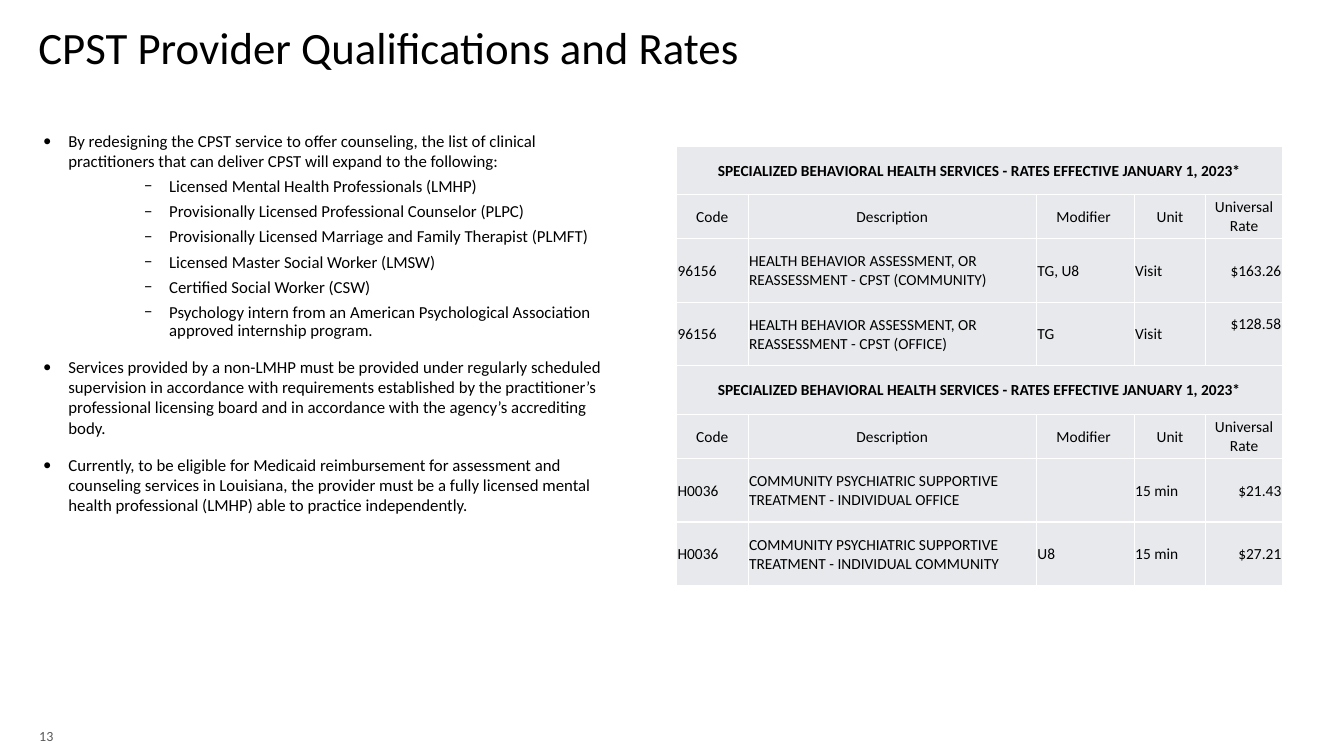
"""Build the CPST provider qualifications and rates slide."""
from dataclasses import dataclass

from lxml.etree import SubElement
from pptx import Presentation
from pptx.dml.color import RGBColor as Color
from pptx.enum.text import MSO_ANCHOR as Anchor, PP_ALIGN as Align
from pptx.oxml.ns import qn
from pptx.util import Inches, Pt

TITLE = "CPST Provider Qualifications and Rates"
PAGE_NUMBER = "13"
POINTS = [
    (0, "By redesigning the CPST service to offer counseling, the list of clinical "
        "practitioners that can deliver CPST will expand to the following:"),
    (1, "Licensed Mental Health Professionals (LMHP)"),
    (1, "Provisionally Licensed Professional Counselor (PLPC)"),
    (1, "Provisionally Licensed Marriage and Family Therapist (PLMFT)"),
    (1, "Licensed Master Social Worker (LMSW)"),
    (1, "Certified Social Worker (CSW)"),
    (1, "Psychology intern from an American Psychological Association "
        "approved internship program."),
    (0, "Services provided by a non-LMHP must be provided under regularly scheduled "
        "supervision in accordance with requirements established by the practitioner’s "
        "professional licensing board and in accordance with the agency’s accrediting body."),
    (0, "Currently, to be eligible for Medicaid reimbursement for assessment and "
        "counseling services in Louisiana, the provider must be a fully licensed mental "
        "health professional (LMHP) able to practice independently."),
]
BANNER = ("SPECIALIZED BEHAVIORAL HEALTH SERVICES - RATES EFFECTIVE JANUARY 1, 2023*",)
HEADINGS = ("Code", "Description", "Modifier ", "Unit", "Universal Rate")
ASSESSMENT = "HEALTH BEHAVIOR ASSESSMENT, OR REASSESSMENT - CPST "
TREATMENT = "COMMUNITY PSYCHIATRIC SUPPORTIVE TREATMENT - INDIVIDUAL "
RATE_GROUPS = [
    [("96156", ASSESSMENT + "(COMMUNITY)", "TG, U8", "Visit", "$163.26"),
     ("96156", ASSESSMENT + "(OFFICE)", "TG", "Visit", "$128.58")],
    [("H0036", TREATMENT + "OFFICE", "", "15 min", "$21.43"),
     ("H0036", TREATMENT + "COMMUNITY", "U8", "15 min", "$27.21")],
]
RAISED_RATE = "$128.58"

SLIDE_SIZE = (13.33, 7.5)
TITLE_AREA = (0.28, 0.21, 11.03, 1.24)
POINTS_AREA = (0.33, 1.25, 5.81, 4.76)
NUMBER_AREA = (0.29, 7.03, 0.59, 0.4)
TABLE_CORNER = (6.71, 1.45)
COLUMNS = (0.71, 2.86, 0.97, 0.71, 0.76)
BANNER_ROW, HEADING_ROW, RATE_ROW = 0.48, 0.44, 0.63
LEVELS = [
    {"bullet": "•", "indent": 0.25, "before": 12, "spacing": 1.0},
    {"bullet": "−", "indent": 1.25, "before": 5, "spacing": 0.9},
]
HANGING = 0.25


@dataclass(frozen=True)
class Theme:
    font: str = "Calibri"
    ink: str = "000000"
    muted: str = "595959"
    cell: str = "E7E9EC"
    border: str = "FFFFFF"
    title_size: int = 32
    body_size: int = 12
    table_size: int = 11
    number_size: int = 10


THEME = Theme()


def style(para, size, color=THEME.ink, bold=False):
    for font in [para.font] + [span.font for span in para.runs]:
        font.name, font.size, font.bold = THEME.font, Pt(size), bold
        font.color.rgb = Color.from_string(color)


def add_box(page, area):
    box = page.shapes.add_textbox(*map(Inches, area))
    box.text_frame.word_wrap = True
    return box.text_frame


def add_title(page):
    title = page.shapes.title
    title.left, title.top, title.width, title.height = map(Inches, TITLE_AREA)
    frame = title.text_frame
    frame.text = TITLE
    frame.word_wrap = True
    frame.vertical_anchor = Anchor.TOP
    para = frame.paragraphs[0]
    para.alignment, para.line_spacing = Align.LEFT, 0.9
    style(para, THEME.title_size)


def add_points(page):
    frame = add_box(page, POINTS_AREA)
    for index, (depth, text) in enumerate(POINTS):
        level = LEVELS[depth]
        para = frame.add_paragraph() if index else frame.paragraphs[0]
        para.text = text
        para.level = depth
        para.line_spacing = level["spacing"]
        para.space_before = Pt(level["before"] if index else 0)
        props = para._p.get_or_add_pPr()
        props.set("marL", str(Inches(level["indent"])))
        props.set("indent", str(-Inches(HANGING)))
        SubElement(props, qn("a:buFont"), typeface=THEME.font)
        SubElement(props, qn("a:buChar"), char=level["bullet"])
        style(para, THEME.body_size)


def add_borders(cell):
    props = cell._tc.get_or_add_tcPr()
    for position, side in enumerate(("lnL", "lnR", "lnT", "lnB")):
        line = SubElement(props, qn(f"a:{side}"), w=str(Pt(1)))
        fill = SubElement(line, qn("a:solidFill"))
        SubElement(fill, qn("a:srgbClr"), val=THEME.border)
        props.insert(position, line)


def fill_cell(cell, text, align, bold):
    cell.fill.solid()
    cell.fill.fore_color.rgb = Color.from_string(THEME.cell)
    cell.vertical_anchor = Anchor.MIDDLE
    cell.margin_left = cell.margin_right = cell.margin_top = Inches(0.01)
    cell.margin_bottom = Inches(0.2 if text == RAISED_RATE else 0)
    cell.text = text
    para = cell.text_frame.paragraphs[0]
    para.alignment = align
    style(para, THEME.table_size, bold=bold)
    add_borders(cell)


def add_rates(page):
    rows = []
    for rates in RATE_GROUPS:
        rows += [(BANNER, BANNER_ROW), (HEADINGS, HEADING_ROW)]
        rows += [(rate, RATE_ROW) for rate in rates]
    size = (sum(COLUMNS), sum(height for _, height in rows))
    table = page.shapes.add_table(
        len(rows), len(COLUMNS), *map(Inches, TABLE_CORNER + size)).table
    table.first_row = table.horz_banding = False
    for column, width in zip(table.columns, COLUMNS):
        column.width = Inches(width)
    for row, (texts, height) in enumerate(rows):
        table.rows[row].height = Inches(height)
        for column in range(len(COLUMNS)):
            text = texts[column] if column < len(texts) else ""
            if texts in (BANNER, HEADINGS):
                align = Align.CENTER
            else:
                align = Align.RIGHT if column == len(COLUMNS) - 1 else Align.LEFT
            fill_cell(table.cell(row, column), text, align, texts is BANNER)
        if texts is BANNER:
            table.cell(row, 0).merge(table.cell(row, len(COLUMNS) - 1))


def add_number(page):
    frame = add_box(page, NUMBER_AREA)
    frame.text = PAGE_NUMBER
    frame.vertical_anchor = Anchor.BOTTOM
    style(frame.paragraphs[0], THEME.number_size, THEME.muted)


def main():
    deck = Presentation()
    deck.slide_width, deck.slide_height = map(Inches, SLIDE_SIZE)
    page = deck.slides.add_slide(deck.slide_layouts.get_by_name("Title Only"))
    add_title(page)
    add_number(page)
    add_points(page)
    add_rates(page)
    deck.save("out.pptx")


if __name__ == "__main__":
    main()
